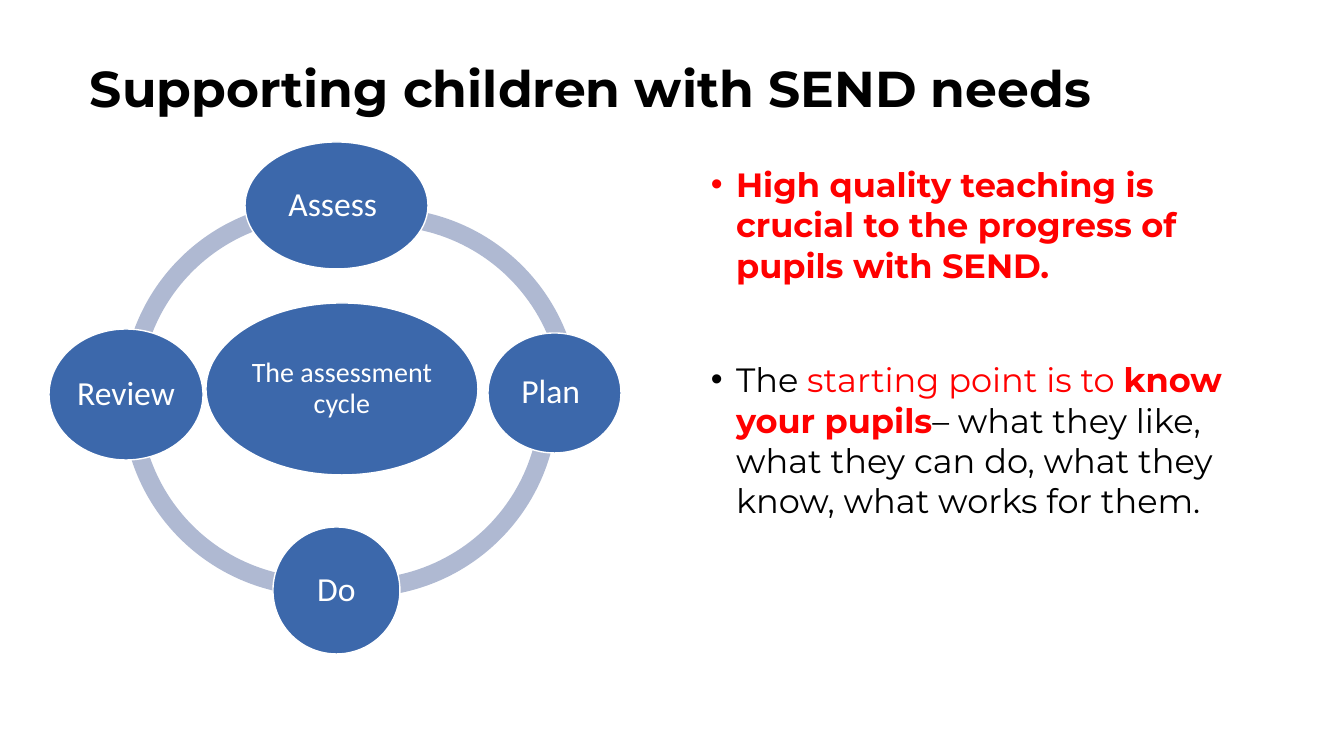
import pptx
import pptx.util
import pptx.dml.color
import pptx.enum.shapes
import pptx.enum.text
import lxml.etree
import pptx.oxml.ns

PX = 9071.43
BLACK = pptx.dml.color.RGBColor(0x00, 0x00, 0x00)
WHITE = pptx.dml.color.RGBColor(0xFF, 0xFF, 0xFF)
RED = pptx.dml.color.RGBColor(0xFF, 0x00, 0x00)
BLUE = pptx.dml.color.RGBColor(0x3C, 0x68, 0xAB)
PALE = pptx.dml.color.RGBColor(0xAF, 0xB9, 0xD2)
MSO = pptx.enum.shapes.MSO_SHAPE
MIDDLE = pptx.enum.text.MSO_ANCHOR.MIDDLE
CENTER = pptx.enum.text.PP_ALIGN.CENTER


def px(*lengths):
    return [pptx.util.Emu(round(n * PX)) for n in lengths]


def add_run(p, text, color, **formats):
    r = p.add_run()
    r.text = text
    r.font.color.rgb = color
    for name, value in formats.items():
        setattr(r.font, name, value)


prs = pptx.Presentation()
prs.slide_width, prs.slide_height = px(1344, 756)
s = prs.slides.add_slide(prs.slide_layouts[6])

tf = s.shapes.add_textbox(*px(80, 40, 1159, 103)).text_frame
tf.word_wrap = True
tf.vertical_anchor = MIDDLE
p = tf.paragraphs[0]
p.line_spacing = 0.9
add_run(p, "Supporting children with SEND needs", BLACK,
        name="Montserrat", size=pptx.util.Pt(36), bold=True)

arcs = [
    (122, 201, 108.57, 165.05),
    (122, 202, 50.95, 108.84),
    (164, 203, 214.77, 58.48),
    (186, 208, 157.54, 215.35),
]
for left, top, *angles in arcs:
    sp = s.shapes.add_shape(MSO.BLOCK_ARC, *px(left, top, 394, 394))
    sp.shadow.inherit = False
    sp.fill.solid()
    sp.fill.fore_color.rgb = PALE
    sp.line.fill.background()
    for i, value in enumerate((*angles, 0.046)):
        sp.adjustments[i] = value

stages = [
    ("The assessment cycle", 20, 206, 303, 272, 172),
    ("Assess ", 24, 245, 142, 183, 127),
    ("Plan ", 24, 488, 333, 133, 120),
    ("Do", 24, 273, 527, 127, 127),
    ("Review ", 24, 49, 329, 154, 131),
]
for text, size, *box in stages:
    sp = s.shapes.add_shape(MSO.OVAL, *px(*box))
    sp.shadow.inherit = False
    sp.fill.solid()
    sp.fill.fore_color.rgb = BLUE
    sp.line.color.rgb = WHITE
    sp.line.width = pptx.util.Pt(1)
    tf = sp.text_frame
    tf.word_wrap = True
    tf.vertical_anchor = MIDDLE
    for side in ("left", "top", "right", "bottom"):
        setattr(tf, f"margin_{side}", px(3)[0])
    p = tf.paragraphs[0]
    p.alignment = CENTER
    p.line_spacing = 0.9
    add_run(p, text, WHITE, name="Calibri", size=pptx.util.Pt(size))

points = [
    (0, [("High quality teaching is crucial to the progress of pupils with SEND.", RED, True)]),
    (47, [
        ("The ", BLACK, False),
        ("starting point is to ", RED, False),
        ("know your pupils", RED, True),
        ("– what they like, what they can do, what they know, what works for them.", BLACK, False),
    ]),
]
tf = s.shapes.add_textbox(*px(701, 159, 547, 495)).text_frame
tf.word_wrap = True
for i, (before, runs) in enumerate(points):
    p = tf.add_paragraph() if i else tf.paragraphs[0]
    pPr = p._p.get_or_add_pPr()
    pPr.set("marL", "228600")
    pPr.set("indent", "-228600")
    for tag, key, value in (("a:buFont", "typeface", "Arial"), ("a:buChar", "char", "•")):
        lxml.etree.SubElement(pPr, pptx.oxml.ns.qn(tag)).set(key, value)
    p.space_before = pptx.util.Pt(before)
    p.space_after = pptx.util.Pt(6)
    for text, color, bold in runs:
        add_run(p, text, color, name="Montserrat", size=pptx.util.Pt(24), bold=bold)

prs.save("out.pptx")
